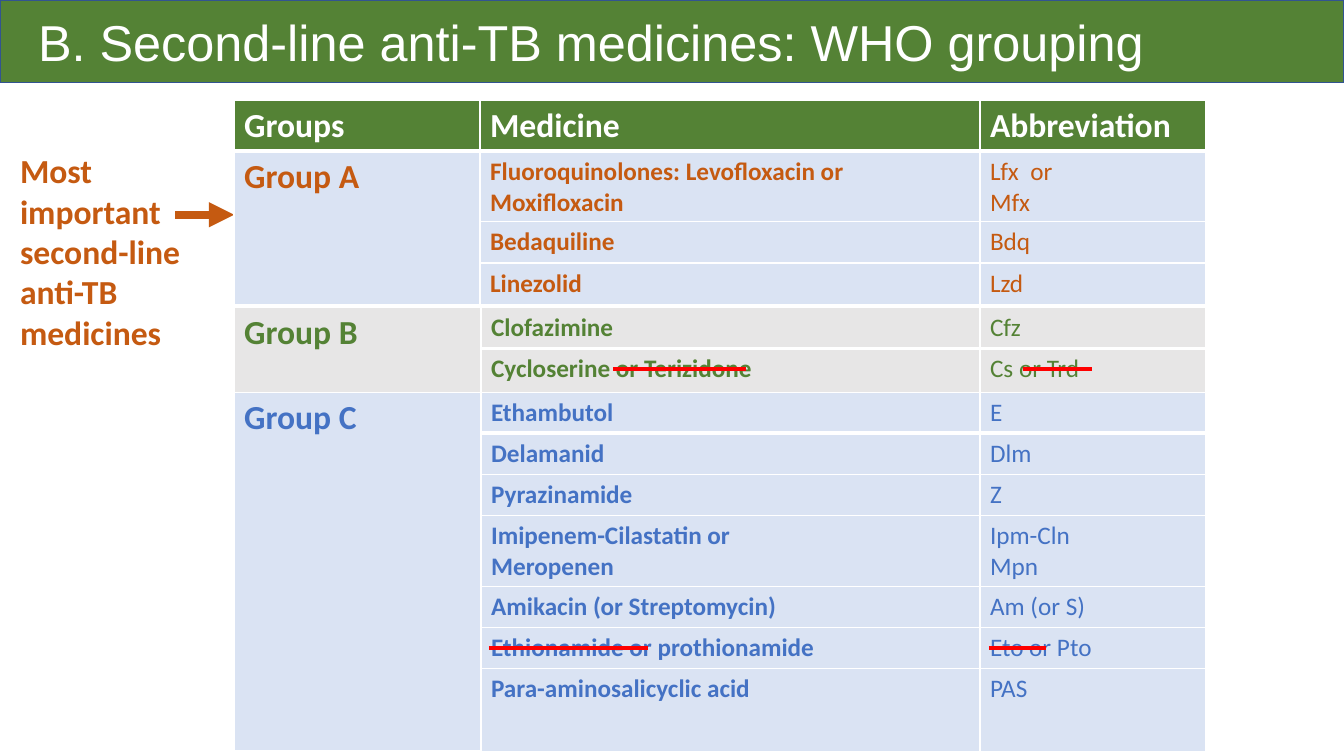
from lxml import etree
from pptx import Presentation
from pptx.dml.color import RGBColor
from pptx.enum.shapes import MSO_CONNECTOR, MSO_SHAPE
from pptx.enum.text import MSO_ANCHOR, PP_ALIGN
from pptx.oxml.ns import qn
from pptx.util import Pt

STRAIGHT = MSO_CONNECTOR.STRAIGHT
RECTANGLE = MSO_SHAPE.RECTANGLE
MIDDLE = MSO_ANCHOR.MIDDLE
LEFT = PP_ALIGN.LEFT

GREEN, ORANGE, BLUE = "548235", "C55A11", "4472C4"
WHITE, RED, NAVY = "FFFFFF", "FF0000", "325491"
PALE_BLUE, PALE_GREY = "DAE3F3", "E7E6E6"
THIN, THICK = 1, 3
ROW, TALL_ROW, HEADER_ROW, LAST_ROW = 29.4, 50, 36, 59.3
TABLE_LEFT = 167.2

GROUP_A = [
    ("Fluoroquinolones: Levofloxacin or Moxifloxacin", "Lfx  or\nMfx", TALL_ROW),
    ("Bedaquiline", "Bdq", ROW),
    ("Linezolid", "Lzd", ROW),
]
GROUP_B = [
    ("Clofazimine", "Cfz", ROW),
    ("Cycloserine or Terizidone", "Cs or Trd", ROW),
]
GROUP_C = [
    ("Ethambutol", "E", ROW),
    ("Delamanid", "Dlm", ROW),
    ("Pyrazinamide", "Z", ROW),
    ("Imipenem-Cilastatin or\nMeropenen", "Ipm-Cln\nMpn", TALL_ROW),
    ("Amikacin (or Streptomycin)", "Am (or S)", ROW),
    ("Ethionamide or prothionamide", "Eto or Pto", ROW),
    ("Para-aminosalicyclic acid", "PAS", LAST_ROW),
]


def rgb(value):
    """Turn a hex string into a colour."""
    return RGBColor.from_string(value)


def write(frame, text, color, **font_format):
    """Fill a text frame, one paragraph per line of text."""
    frame.text = text
    for paragraph in frame.paragraphs:
        paragraph.alignment = LEFT
        for run in paragraph.runs:
            run.font.color.rgb = rgb(color)
            for key, value in font_format.items():
                setattr(run.font, key, value)


def draw_line(slide, x1, x2, y, color, width, arrow=False):
    """Draw a horizontal line, with an arrowhead if asked."""
    line = slide.shapes.add_connector(STRAIGHT, Pt(x1), Pt(y), Pt(x2), Pt(y))
    line.line.color.rgb = rgb(color)
    line.line.width = Pt(width)
    properties = line._element.spPr
    if arrow:
        etree.SubElement(properties.find(qn("a:ln")), qn("a:tailEnd"), type="triangle")
    etree.SubElement(properties, qn("a:effectLst"))


def draw_title(slide, left, top, width, height):
    """Draw the title band."""
    band = slide.shapes.add_shape(RECTANGLE, Pt(left), Pt(top), Pt(width), Pt(height))
    band.shadow.inherit = False
    band.fill.solid()
    band.fill.fore_color.rgb = rgb(GREEN)
    band.line.color.rgb = rgb(NAVY)
    band.line.width = Pt(1)
    frame = band.text_frame
    frame.word_wrap = True
    frame.vertical_anchor = MIDDLE
    frame.margin_left = Pt(27.2)
    write(frame, "B. Second-line anti-TB medicines: WHO grouping", WHITE,
          size=Pt(36), name="Arial", bold=False)


def draw_callout(slide, left, top, width, height):
    """Draw the side remark and its arrow to Group A."""
    remark = slide.shapes.add_textbox(Pt(left), Pt(top), Pt(width), Pt(height))
    remark.text_frame.word_wrap = True
    write(remark.text_frame, "Most important second-line anti-TB medicines", ORANGE,
          size=Pt(24), name="Calibri", bold=True)
    draw_line(slide, left + 118, TABLE_LEFT, top + 49.7, ORANGE, 6, arrow=True)


def style_cell(cell, fill, top, bottom):
    """Set the fill and the white borders of a cell."""
    cell.fill.solid()
    cell.fill.fore_color.rgb = rgb(fill)
    properties = cell._tc.get_or_add_tcPr()
    borders = {"a:lnL": THIN, "a:lnR": THIN, "a:lnT": top, "a:lnB": bottom}
    for position, (side, width) in enumerate(borders.items()):
        border = etree.Element(qn(side), w=str(Pt(width)))
        paint = etree.SubElement(border, qn("a:solidFill"))
        etree.SubElement(paint, qn("a:srgbClr"), val=WHITE)
        properties.insert(position, border)


def draw_group(slide, left, top, widths, group, medicines, color, fill,
               header=None, thick_row=0):
    """Draw the table of one group, with a thick rule under thick_row."""
    first = 1 if header else 0
    heights = [HEADER_ROW] * first + [height for *_, height in medicines]
    table = slide.shapes.add_table(len(heights), len(widths), Pt(left), Pt(top),
                                   Pt(sum(widths)), Pt(sum(heights))).table
    table.first_row = False
    table.horz_banding = False
    for column, width in zip(table.columns, widths):
        column.width = Pt(width)
    for index, height in enumerate(heights):
        table.rows[index].height = Pt(height)
        for cell in table.rows[index].cells:
            style_cell(cell, GREEN if index < first else fill,
                       THICK if index == thick_row + 1 else THIN,
                       THICK if index == thick_row else THIN)
    heading = {"size": Pt(24), "name": "Calibri", "bold": True}
    for column, label in enumerate(header or ()):
        write(table.cell(0, column).text_frame, label, WHITE, **heading)
    table.cell(first, 0).merge(table.cell(len(heights) - 1, 0))
    write(table.cell(first, 0).text_frame, group, color, **heading)
    for index, (medicine, abbreviation, _) in enumerate(medicines, first):
        for column, text in ((1, medicine), (2, abbreviation)):
            write(table.cell(index, column).text_frame, text, color,
                  size=Pt(18), name="Calibri", bold=column == 1)


def draw_strikes(slide, y, *spans):
    """Strike out the withdrawn medicines of one row."""
    for start, end in spans:
        draw_line(slide, start, end, y, RED, 3)


def main():
    """Build and save the slide."""
    deck = Presentation()
    deck.slide_width, deck.slide_height = Pt(960), Pt(540)
    slide = deck.slides.add_slide(deck.slide_layouts[6])
    draw_callout(slide, 7.2, 103.7, 168, 152.6)
    draw_title(slide, 0, 0, 960, 59)
    draw_group(slide, TABLE_LEFT, 72, (175.7, 357.1, 161.3), "Group A", GROUP_A,
               ORANGE, PALE_BLUE, header=("Groups", "Medicine", "Abbreviation"))
    lower_widths = (176.4, 356.4, 161.3)
    draw_group(slide, TABLE_LEFT, 219.6, lower_widths, "Group B", GROUP_B,
               GREEN, PALE_GREY)
    draw_group(slide, TABLE_LEFT, 280.1, lower_widths, "Group C", GROUP_C,
               BLUE, PALE_BLUE)
    draw_strikes(slide, 263.5, (437.8, 532.8), (730.8, 779.8))
    draw_strikes(slide, 463, (349.2, 463), (706.3, 747.4))
    deck.save("out.pptx")


if __name__ == "__main__":
    main()
